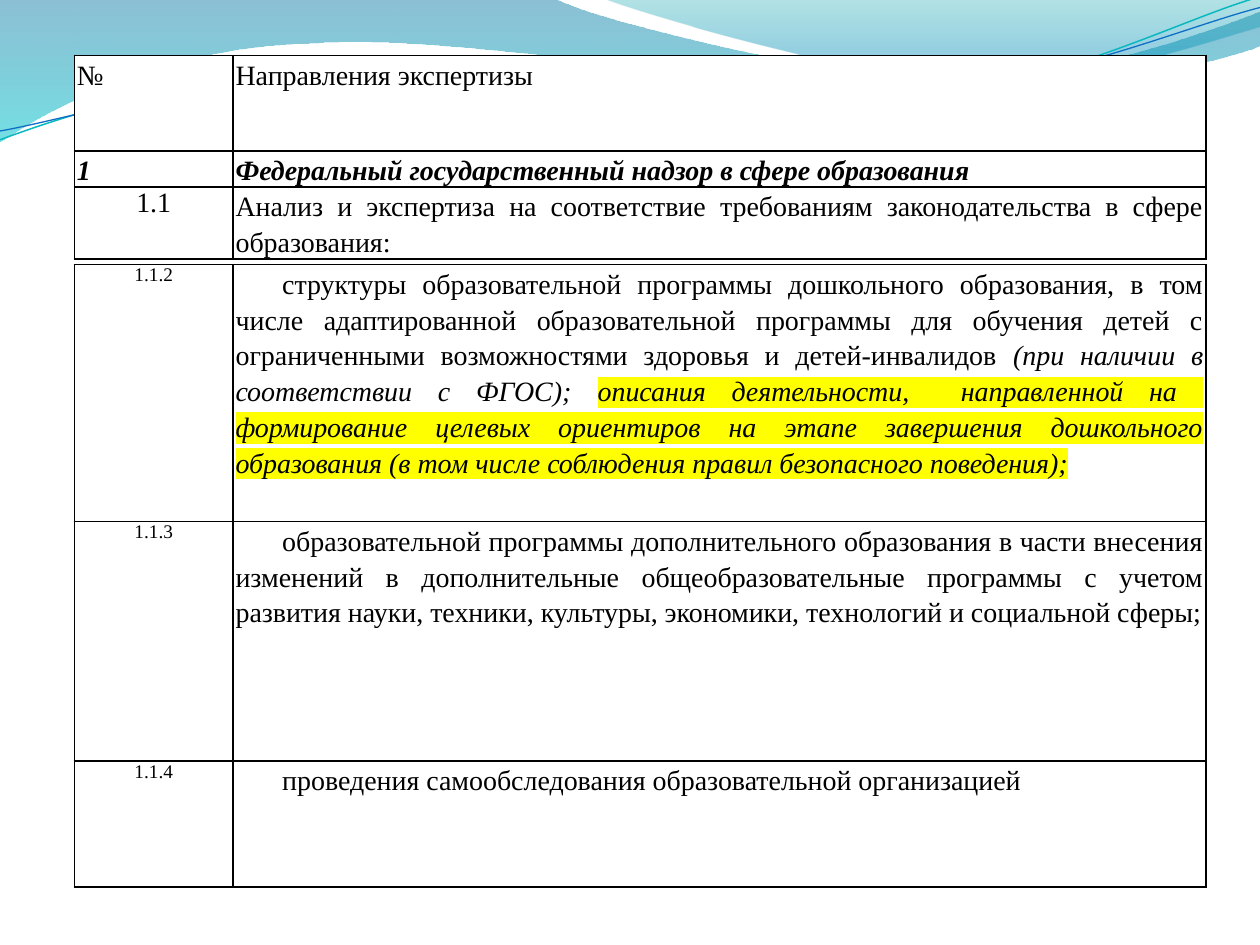
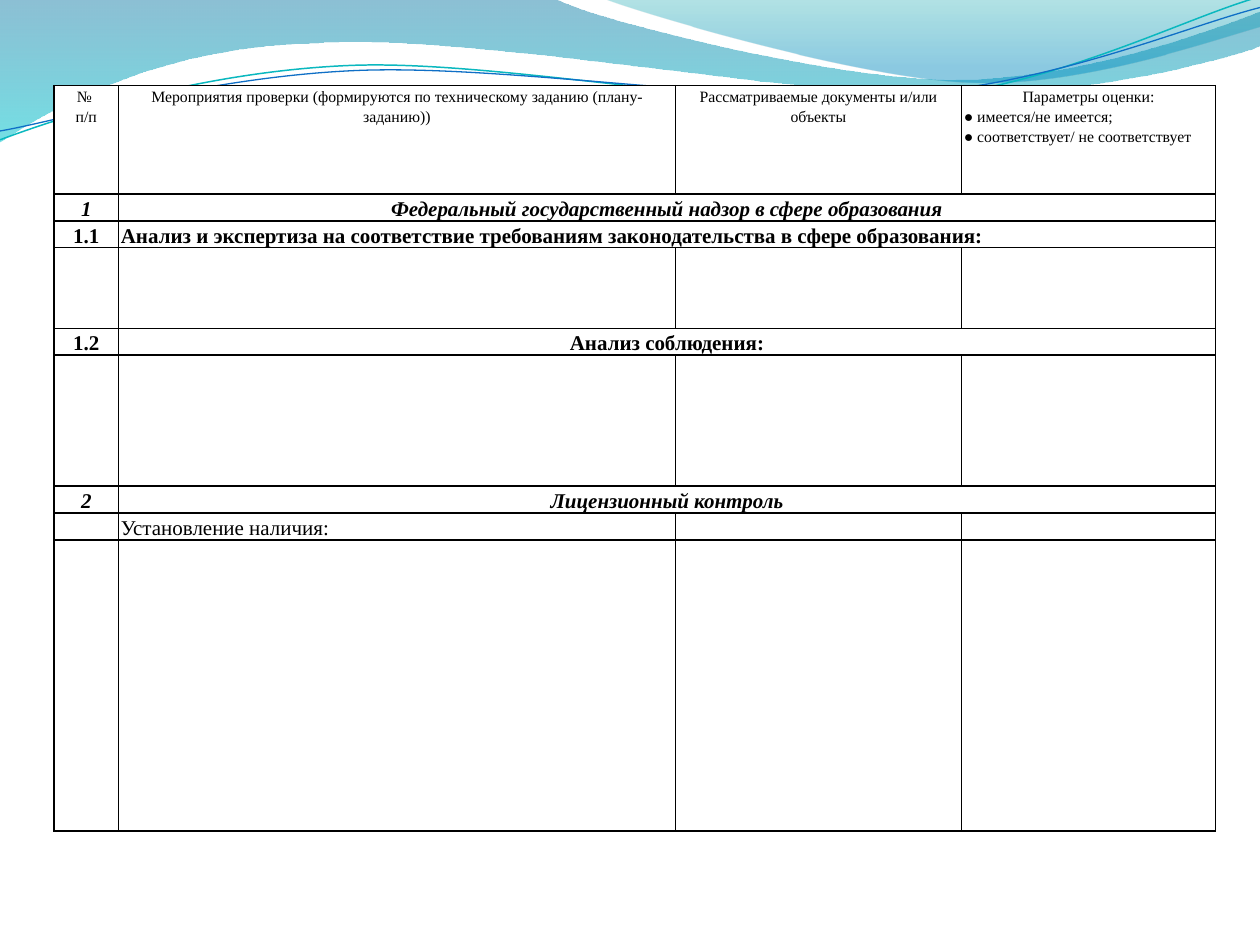
from dataclasses import dataclass
from math import cos, radians, sin

from lxml import etree
from pptx import Presentation
from pptx.dml.color import RGBColor
from pptx.enum.text import PP_ALIGN
from pptx.oxml.ns import qn
from pptx.util import Inches, Pt

LEFT, CENTER, JUSTIFY = PP_ALIGN.LEFT, PP_ALIGN.CENTER, PP_ALIGN.JUSTIFY


@dataclass(frozen=True)
class Theme:
    font: str = "Times New Roman"
    ink: str = "000000"
    paper: str = "FFFFFF"
    marker: str = "FFFF00"
    border: float = 1
    side_margin: float = 0.02
    large: int = 16
    medium: int = 12
    small: int = 11
    tiny: int = 9


THEME = Theme()


@dataclass(frozen=True)
class Style:
    size: int
    align: PP_ALIGN
    spacing: float = 1.15
    indent: float = 0
    bold: bool = False
    italic: bool = False


STYLES = {
    "body": Style(THEME.large, JUSTIFY),
    "clause": Style(THEME.large, JUSTIFY, indent=0.37),
    "heading": Style(THEME.large, JUSTIFY, bold=True, italic=True),
    "number": Style(THEME.large, CENTER, spacing=1),
    "subnumber": Style(THEME.small, CENTER, spacing=1),
    "label": Style(THEME.tiny, CENTER),
    "option": Style(THEME.tiny, LEFT),
    "section": Style(THEME.medium, CENTER, bold=True, italic=True),
    "topic": Style(THEME.medium, CENTER, bold=True),
    "topic text": Style(THEME.medium, JUSTIFY, bold=True),
    "entry": Style(THEME.medium, LEFT),
    "empty": Style(THEME.tiny, LEFT),
}

# Content: a cell is a list of (style, text); a text may be a list of
# (words, italic, highlighted) runs. A short row merges its last cell to the edge.
EMPTY = [("empty", "")]

DIRECTIONS = {
    "at": (0.59, 0.44),
    "columns": (1.26, 7.72),
    "rows": [
        (0.76, [[("body", "№")], [("body", "Направления экспертизы")]]),
        (0.28, [[("heading", "1")],
                [("heading", "Федеральный государственный надзор в сфере образования")]]),
        (0.57, [[("number", "1.1")],
                [("body", "Анализ и экспертиза на соответствие требованиям "
                          "законодательства в сфере образования: ")]]),
    ],
}

CLAUSES = {
    "at": (0.59, 2.1),
    "columns": (1.26, 7.72),
    "rows": [
        (2.04, [[("subnumber", "1.1.2")], [("clause", [
            ("структуры образовательной программы дошкольного образования, в том числе "
             "адаптированной образовательной программы для обучения детей с ограниченными "
             "возможностями здоровья и детей-инвалидов ", False, False),
            ("(при наличии в соответствии с ФГОС); ", True, False),
            ("описания деятельности,  направленной на  формирование целевых ориентиров "
             "на этапе завершения дошкольного образования (в том числе соблюдения правил "
             "безопасного поведения);", True, True),
        ])]]),
        (1.9, [[("subnumber", "1.1.3")],
               [("clause", "образовательной программы дополнительного образования в части "
                           "внесения изменений в дополнительные общеобразовательные программы "
                           "с учетом развития науки, техники, культуры, экономики, технологий "
                           "и социальной сферы;")]]),
        (1, [[("subnumber", "1.1.4")],
             [("clause", "проведения самообследования образовательной организацией")]]),
    ],
}

INSPECTION = {
    "at": (0.43, 0.68),
    "columns": (0.51, 4.42, 2.27, 2.02),
    "rows": [
        (0.86, [
            [("label", "№ "), ("label", "п/п")],
            [("label", "Мероприятия проверки (формируются по техническому заданию "
                       "(плану-заданию))")],
            [("label", "Рассматриваемые документы и/или объекты")],
            [("label", "Параметры оценки:"), ("option", "● имеется/не имеется;"),
             ("option", "● соответствует/ не соответствует")],
        ]),
        (0.21, [[("section", "1")],
                [("section", "Федеральный государственный надзор в сфере образования")]]),
        (0.21, [[("topic", "1.1")],
                [("topic text", "Анализ и экспертиза на соответствие требованиям "
                                "законодательства в сфере образования:")]]),
        (0.64, [EMPTY] * 4),
        (0.21, [[("topic", "1.2")], [("topic", "Анализ соблюдения:")]]),
        (1.04, [EMPTY] * 4),
        (0.21, [[("section", "2")], [("section", "Лицензионный контроль")]]),
        (0.21, [EMPTY, [("entry", "Установление наличия:")], EMPTY, EMPTY]),
        (2.31, [EMPTY] * 4),
    ],
}

SLIDES = [[CLAUSES, DIRECTIONS], [INSPECTION]]

# Wave outlines: a start, then points (2 numbers) or Bezier curves (6 numbers).
# Gradient stops are (position, colour, opacity in percent).
WAVE_BANDS = [
    ([(0, 0), (4.4, -0.01), (4.76, 0.17, 6.64, 0.63, 7.58, 0.63),
      (8.53, 0.63, 9.58, 0.26, 10, 0.09), (10.01, 0.36),
      (9.83, 0.44, 8.7, 0.76, 7.46, 0.75), (6.22, 0.75, 3.82, 0.28, 2.57, 0.34),
      (1.29, 0.36, 0.46, 0.83, -0.01, 1.13), (0, 0)],
     [(0, "0074A1", 45), (1, "00C6CF", 55)]),
    ([(4.79, -0.01), (5.09, 0.11, 6.82, 0.62, 7.69, 0.65),
      (8.56, 0.69, 9.61, 0.32, 10, 0.21), (10, 0), (4.79, -0.01)],
     [(0, "00A1A9", 30), (0.8, "008BBF", 45)]),
]
# Each line is tilted about its centre.
WAVE_TILT = -2.7
WAVE_LINES = [
    ([(0, 1.11), (0.48, 0.93, 1.58, 0.57, 2.77, 0.52),
      (3.95, 0.47, 5.93, 0.89, 7.13, 0.8), (8.33, 0.71, 9.38, 0.15, 9.98, -0.02)],
     (4.99, 0.57), "0AB8BF", 0.85),
    ([(0, 1.04), (0.47, 0.96, 1.64, 0.61, 2.83, 0.56),
      (4.03, 0.51, 5.97, 0.84, 7.17, 0.75), (8.36, 0.67, 9.41, 0.21, 10, 0.06)],
     (5, 0.59), "0F6FC6", 0.75),
]


def rgb(colour):
    return RGBColor.from_string(colour)


def pairs(segment):
    return list(zip(segment[::2], segment[1::2]))


def level(outline, centre):
    """Turn an outline back to its untilted position."""
    angle, (cx, cy) = radians(-WAVE_TILT), centre
    turned = []
    for segment in outline:
        points = [(cx + (x - cx) * cos(angle) - (y - cy) * sin(angle),
                   cy + (x - cx) * sin(angle) + (y - cy) * cos(angle))
                  for x, y in pairs(segment)]
        turned.append(sum(points, ()))
    return turned


def add_outline(slide, outline, close):
    start, *ends = [(Inches(s[-2]), Inches(s[-1])) for s in outline]
    builder = slide.shapes.build_freeform(*start)
    builder.add_line_segments(ends, close=close)
    shape = builder.convert_to_shape()
    shape.shadow.inherit = False
    # Bend the straight segments that have control points
    straight = list(shape.element.iter(qn("a:lnTo")))
    for line, segment in zip(straight, outline[1:]):
        if len(segment) == 6:
            curve = etree.Element(qn("a:cubicBezTo"))
            for x, y in pairs(segment):
                etree.SubElement(curve, qn("a:pt"), x=str(Inches(x) - shape.left),
                                 y=str(Inches(y) - shape.top))
            line.getparent().replace(line, curve)
    return shape


def add_waves(slide):
    for outline, stops in WAVE_BANDS:
        band = add_outline(slide, outline, True)
        band.line.fill.background()
        band.fill.gradient()
        band.fill.gradient_angle = 270
        for stop, (position, colour, _) in zip(band.fill.gradient_stops, stops):
            stop.position = position
            stop.color.rgb = rgb(colour)
        colours = band.element.spPr.iter(qn("a:srgbClr"))
        for element, (_, _, opacity) in zip(list(colours), stops):
            etree.SubElement(element, qn("a:alpha"), val=str(opacity * 1000))
    for outline, centre, colour, width in WAVE_LINES:
        wave = add_outline(slide, level(outline, centre), False)
        wave.rotation = WAVE_TILT
        wave.fill.background()
        wave.line.color.rgb = rgb(colour)
        wave.line.width = Pt(width)


def write_paragraph(paragraph, style, text):
    paragraph.alignment = style.align
    paragraph.line_spacing = style.spacing
    if style.indent:
        paragraph._p.get_or_add_pPr().set("indent", str(Inches(style.indent)))
    font = paragraph.font
    font.name, font.size = THEME.font, Pt(style.size)
    font.bold, font.italic = style.bold, style.italic
    font.color.rgb = rgb(THEME.ink)
    if not text:
        etree.SubElement(paragraph._p, qn("a:endParaRPr"), sz=str(style.size * 100))
        return
    runs = [(text, style.italic, False)] if isinstance(text, str) else text
    for words, italic, highlighted in runs:
        run = paragraph.add_run()
        run.text = words
        if italic != style.italic:
            run.font.italic = italic
        if highlighted:
            highlight = etree.SubElement(run._r.get_or_add_rPr(), qn("a:highlight"))
            etree.SubElement(highlight, qn("a:srgbClr"), val=THEME.marker)


def frame_cell(cell):
    cell.margin_left = cell.margin_right = Inches(THEME.side_margin)
    cell.margin_top = cell.margin_bottom = 0
    cell.fill.solid()
    cell.fill.fore_color.rgb = rgb(THEME.paper)
    properties = cell._tc.get_or_add_tcPr()
    for index, side in enumerate(("a:lnL", "a:lnR", "a:lnT", "a:lnB")):
        line = etree.Element(qn(side), w=str(Pt(THEME.border)))
        fill = etree.SubElement(line, qn("a:solidFill"))
        etree.SubElement(fill, qn("a:srgbClr"), val=THEME.ink)
        properties.insert(index, line)


def add_grid(slide, content):
    columns, rows = content["columns"], content["rows"]
    left, top = content["at"]
    height = sum(row_height for row_height, _ in rows)
    table = slide.shapes.add_table(len(rows), len(columns), Inches(left), Inches(top),
                                   Inches(sum(columns)), Inches(height)).table
    table.first_row = table.horz_banding = False
    for column, width in zip(table.columns, columns):
        column.width = Inches(width)
    last = len(columns) - 1
    for r, (row_height, cells) in enumerate(rows):
        table.rows[r].height = Inches(row_height)
        for c in range(len(columns)):
            cell = table.cell(r, c)
            frame_cell(cell)
            paragraphs = cells[c] if c < len(cells) else EMPTY
            for index, (style, text) in enumerate(paragraphs):
                frame = cell.text_frame
                paragraph = frame.add_paragraph() if index else frame.paragraphs[0]
                write_paragraph(paragraph, STYLES[style], text)
        if len(cells) <= last:
            table.cell(r, len(cells) - 1).merge(table.cell(r, last))


def main():
    deck = Presentation()
    deck.slide_width, deck.slide_height = Inches(10), Inches(7.5)
    blank = deck.slide_layouts[6]
    for tables in SLIDES:
        slide = deck.slides.add_slide(blank)
        add_waves(slide)
        for content in tables:
            add_grid(slide, content)
    deck.save("out.pptx")


if __name__ == "__main__":
    main()
